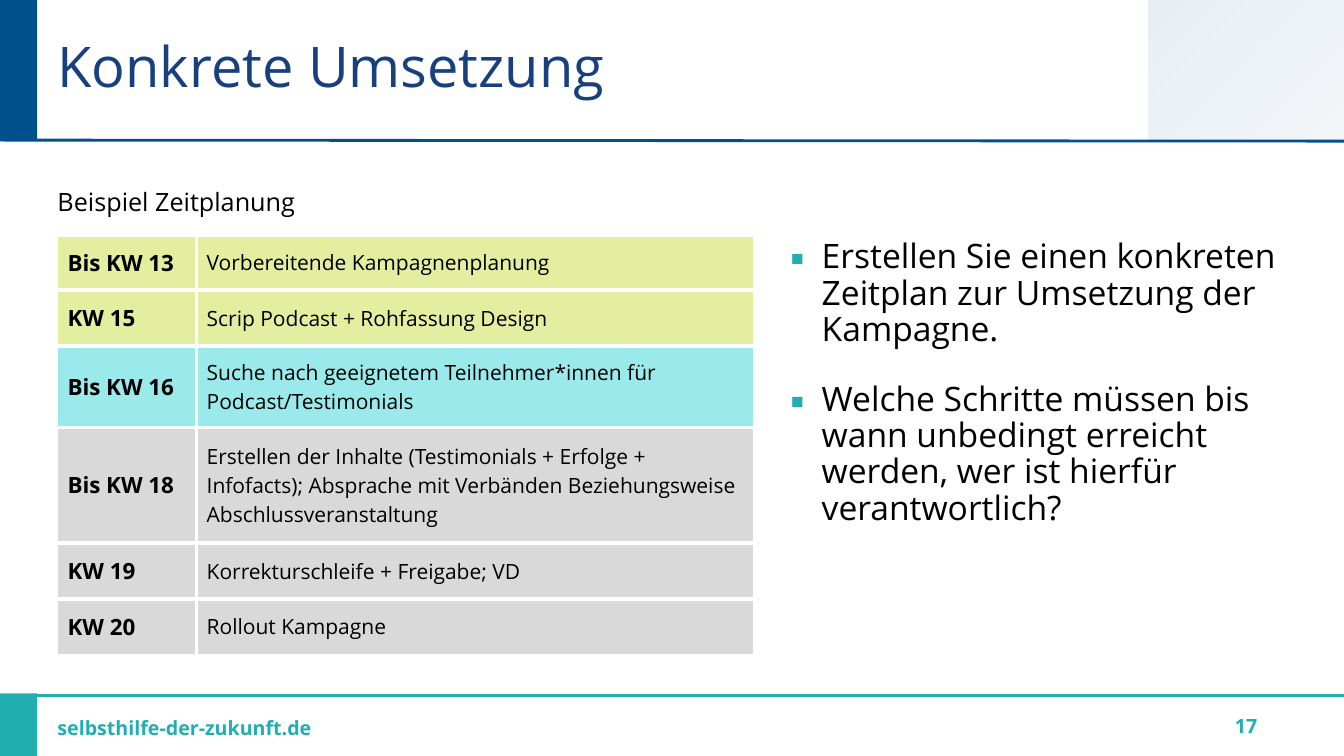
from dataclasses import dataclass

from lxml import etree
from pptx import Presentation
from pptx.dml.color import RGBColor
from pptx.enum.shapes import MSO_CONNECTOR, MSO_SHAPE
from pptx.enum.text import MSO_ANCHOR, MSO_AUTO_SIZE, PP_ALIGN
from pptx.oxml.ns import qn
from pptx.util import Emu, Pt

PX = 9144
FONT = "Open Sans"
COLORS = {
    "navy": "00508E",
    "title": "19407E",
    "teal": "21AEB1",
    "black": "000000",
    "white": "FFFFFF",
    "lime": "E4EEA1",
    "aqua": "9AEAEC",
    "gray": "D9D9D9",
}
STRAIGHT = MSO_CONNECTOR.STRAIGHT
RECTANGLE = MSO_SHAPE.RECTANGLE
MIDDLE = MSO_ANCHOR.MIDDLE
TOP = MSO_ANCHOR.TOP
LEFT = PP_ALIGN.LEFT
CENTER = PP_ALIGN.CENTER
NO_AUTOFIT = MSO_AUTO_SIZE.NONE


@dataclass(frozen=True)
class Area:
    left: int
    top: int
    width: int
    height: int

    def emu(self) -> tuple[Emu, ...]:
        return tuple(Emu(value * PX) for value in (self.left, self.top, self.width, self.height))


@dataclass(frozen=True)
class Band:
    area: Area
    color: str


@dataclass(frozen=True)
class Rule:
    start_y: int
    end_y: int
    color: str


@dataclass(frozen=True)
class Step:
    week: str
    task: str
    color: str
    height: int = 55


@dataclass(frozen=True)
class Label:
    text: str
    area: Area
    align: PP_ALIGN
    insets: tuple[int, int, int, int]


SLIDE_WIDTH, SLIDE_HEIGHT = 1333, 750
HEADER_HEIGHT = 139
FLUSH = (0, 4, 0, 0)
CELL_INSETS = (10, 5, 10, 5)
BANDS = [
    Band(Area(0, 0, 37, HEADER_HEIGHT), "navy"),
    Band(Area(0, 688, 37, 62), "teal"),
]
RULES = [Rule(139, 140, "navy"), Rule(690, 690, "teal")]
TINT_AREA = Area(1139, 0, 194, HEADER_HEIGHT)
TITLE_AREA = Area(57, 0, 1060, 133)
BODY_AREA = Area(784, 234, 493, 417)
TABLE_ORIGIN = (57, 178)
COLUMN_WIDTHS = (138, 552)
CAPTION_HEIGHT = 55
LABELS = [
    Label("selbsthilfe-der-zukunft.de", Area(57, 690, 795, 60), LEFT, FLUSH),
    Label("17", Area(1139, 690, 194, 60), CENTER, CELL_INSETS),
]
STEPS = [
    Step("Bis KW 13", "Vorbereitende Kampagnenplanung", "lime"),
    Step("KW 15", "Scrip Podcast + Rohfassung Design", "lime"),
    Step("Bis KW 16", "Suche nach geeignetem Teilnehmer*innen für Podcast/Testimonials", "aqua", 81),
    Step(
        "Bis KW 18",
        "Erstellen der Inhalte (Testimonials + Erfolge + Infofacts); "
        "Absprache mit Verbänden Beziehungsweise Abschlussveranstaltung",
        "gray",
        115,
    ),
    Step("KW 19", "Korrekturschleife + Freigabe; VD", "gray"),
    Step("KW 20", "Rollout Kampagne", "gray"),
]
QUESTIONS = [
    "Erstellen Sie einen konkreten Zeitplan zur Umsetzung der Kampagne.",
    "Welche Schritte müssen bis wann unbedingt erreicht werden, wer ist hierfür verantwortlich?",
]


def rgb(name: str) -> RGBColor:
    return RGBColor.from_string(COLORS[name])


def style(para, size: int, color: str, bold: bool = False) -> None:
    para.font.name = FONT
    para.font.size = Pt(size)
    para.font.bold = bold
    para.font.color.rgb = rgb(color)


def place(shape, area: Area) -> None:
    shape.left, shape.top, shape.width, shape.height = area.emu()


def set_insets(target, insets: tuple[int, int, int, int]) -> None:
    sides = ("margin_left", "margin_top", "margin_right", "margin_bottom")
    for side, inset in zip(sides, insets):
        setattr(target, side, Emu(inset * PX))


def prepare_frame(shape, insets: tuple[int, int, int, int], anchor: MSO_ANCHOR):
    frame = shape.text_frame
    frame.word_wrap = True
    frame.auto_size = NO_AUTOFIT
    frame.vertical_anchor = anchor
    set_insets(frame, insets)
    return frame


def add_rectangle(page, area: Area):
    shape = page.shapes.add_shape(RECTANGLE, *area.emu())
    shape.shadow.inherit = False
    shape.line.fill.background()
    return shape


def add_band(page, band: Band) -> None:
    shape = add_rectangle(page, band.area)
    shape.fill.solid()
    shape.fill.fore_color.rgb = rgb(band.color)


def add_tint(page) -> None:
    shape = add_rectangle(page, TINT_AREA)
    shape.fill.gradient()
    shape.fill.gradient_angle = 315
    for stop in shape.fill.gradient_stops:
        stop.color.rgb = rgb("navy")
    for color, percent in zip(shape._element.spPr.iter(qn("a:srgbClr")), (10, 5)):
        etree.SubElement(color, qn("a:alpha"), val=str(percent * 1000))


def add_rule(page, rule: Rule) -> None:
    ends = (0, rule.start_y, SLIDE_WIDTH, rule.end_y)
    line = page.shapes.add_connector(STRAIGHT, *(Emu(value * PX) for value in ends))
    line.line.color.rgb = rgb(rule.color)
    line.line.width = Pt(2)
    etree.SubElement(line._element.spPr, qn("a:effectLst"))


def add_label(page, label: Label) -> None:
    box = page.shapes.add_textbox(*label.area.emu())
    para = prepare_frame(box, label.insets, MIDDLE).paragraphs[0]
    para.text = label.text
    para.alignment = label.align
    style(para, 14, "teal", True)


def fill_title(page) -> None:
    title = page.shapes.title
    place(title, TITLE_AREA)
    para = prepare_frame(title, FLUSH, MIDDLE).paragraphs[0]
    para.text = "Konkrete Umsetzung"
    para.alignment = LEFT
    para.line_spacing = 0.9
    style(para, 40, "title")


def add_bullet(para) -> None:
    properties = para._p.get_or_add_pPr()
    properties.set("marL", str(31 * PX))
    properties.set("indent", str(-31 * PX))
    color = etree.SubElement(properties, qn("a:buClr"))
    etree.SubElement(color, qn("a:srgbClr"), val=COLORS["teal"])
    etree.SubElement(properties, qn("a:buSzPct"), val="105000")
    etree.SubElement(properties, qn("a:buFont"), typeface=FONT)
    etree.SubElement(properties, qn("a:buChar"), char="▪")


def fill_body(page) -> None:
    body = page.placeholders[1]
    place(body, BODY_AREA)
    frame = prepare_frame(body, FLUSH, TOP)
    for index, question in enumerate(QUESTIONS):
        para = frame.add_paragraph() if index else frame.paragraphs[0]
        para.text = question
        add_bullet(para)
        para.line_spacing = 0.9
        para.space_before = Pt(18 if index else 0)
        para.space_after = Pt(6)
        style(para, 24, "black")


def fill_cell(cell, text: str, size: int, bold: bool, color: str, borders: dict[str, int]) -> None:
    cell.text = text
    style(cell.text_frame.paragraphs[0], size, "black", bold)
    properties = cell._tc.get_or_add_tcPr()
    for side, width in borders.items():
        border = etree.SubElement(properties, qn(f"a:ln{side}"), w=str(Pt(width)))
        paint = etree.SubElement(border, qn("a:solidFill"))
        etree.SubElement(paint, qn("a:srgbClr"), val=COLORS["white"])
    cell.fill.solid()
    cell.fill.fore_color.rgb = rgb(color)


def add_schedule(page) -> None:
    heights = [CAPTION_HEIGHT] + [step.height for step in STEPS]
    area = Area(*TABLE_ORIGIN, sum(COLUMN_WIDTHS), sum(heights))
    table = page.shapes.add_table(len(heights), len(COLUMN_WIDTHS), *area.emu()).table
    table.first_row = table.horz_banding = False
    for column, width in zip(table.columns, COLUMN_WIDTHS):
        column.width = Emu(width * PX)
    for row, height in zip(table.rows, heights):
        row.height = Emu(height * PX)
    caption = table.cell(0, 0)
    caption.merge(table.cell(0, 1))
    fill_cell(caption, "Beispiel Zeitplanung", 18, False, "white", {"L": 1, "R": 1, "T": 1, "B": 3})
    set_insets(caption, (0, 5, 10, 5))
    for row, step in enumerate(STEPS, start=1):
        for column, (text, size, bold) in enumerate(((step.week, 16, True), (step.task, 15, False))):
            borders = {
                "L": 3 if column else 1,
                "R": 1 if column else 3,
                "T": 3,
                "B": 1 if row == len(STEPS) else 3,
            }
            cell = table.cell(row, column)
            fill_cell(cell, text, size, bold, step.color, borders)
            cell.vertical_anchor = MIDDLE


def main() -> None:
    deck = Presentation()
    deck.slide_width = Emu(SLIDE_WIDTH * PX)
    deck.slide_height = Emu(SLIDE_HEIGHT * PX)
    page = deck.slides.add_slide(deck.slide_layouts[1])
    for band in BANDS:
        add_band(page, band)
    for rule in RULES:
        add_rule(page, rule)
    add_tint(page)
    fill_title(page)
    fill_body(page)
    for label in LABELS:
        add_label(page, label)
    add_schedule(page)
    deck.save("out.pptx")


if __name__ == "__main__":
    main()
